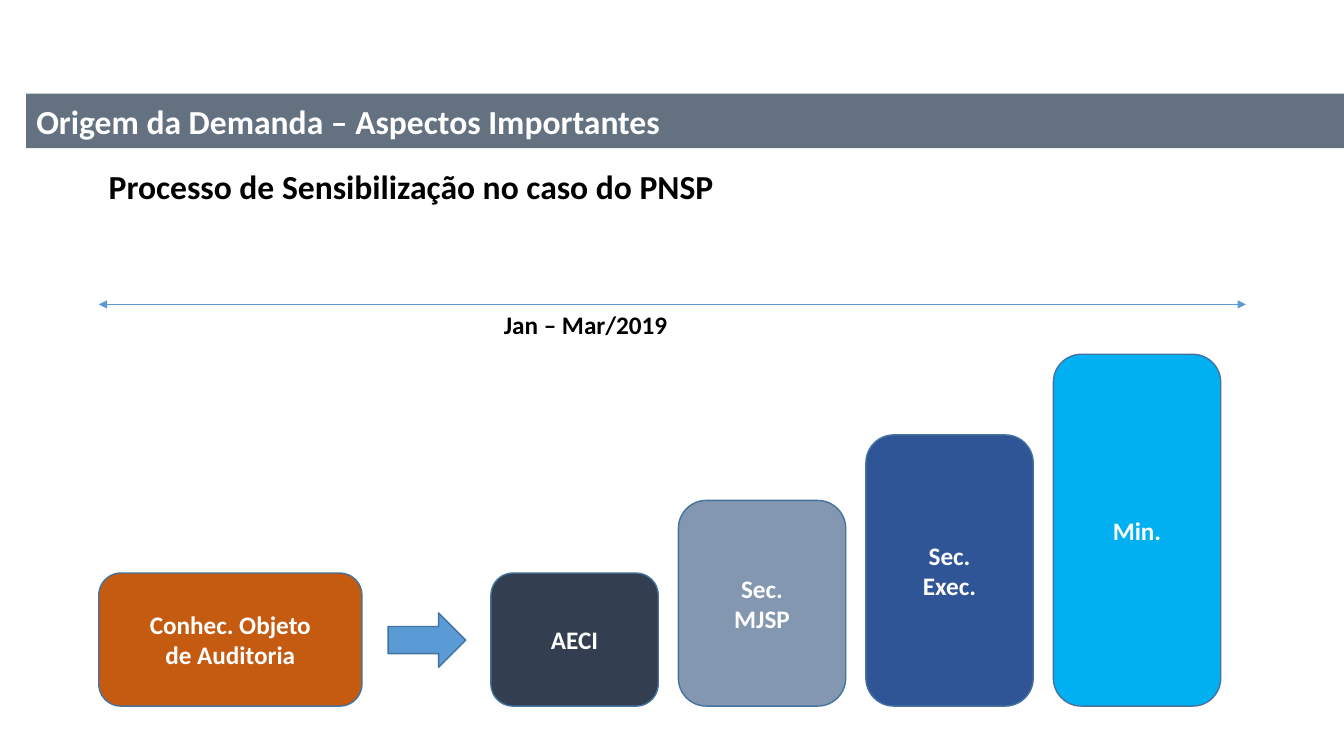
from lxml.etree import SubElement
from pptx import Presentation
from pptx.dml.color import RGBColor
from pptx.enum.shapes import MSO_CONNECTOR, MSO_SHAPE
from pptx.enum.text import MSO_ANCHOR, MSO_AUTO_SIZE, PP_ALIGN
from pptx.oxml.ns import qn
from pptx.util import Inches, Pt

WIDE, HIGH = Inches(13.333), Inches(7.5)

# Places are percent shares of the slide's width and height
LEFT, RIGHT = 7.35, 92.7
BASE = 93.4
STEP_LEFT, STEP_WIDE, STEP_PITCH = 36.53, 12.45, 13.95
LOW = 17.6
STEPS = [
    ("AECI", LOW, "333F50"),
    ("Sec.\nMJSP", 27.2, "8497B0"),
    ("Sec.\nExec.", 35.87, "2F5597"),
    ("Min.", 46.53, "00B0F0"),
]
EDGE, BLUE = "43739E", "5B9BD5"
FONT = {"name": "Calibri", "bold": True}


def color(code):
    return RGBColor.from_string(code)


def across(share):
    return round(WIDE * share / 100)


def down(share):
    return round(HIGH * share / 100)


def area(left, top, width, height):
    return across(left), down(top), across(width), down(height)


def paint(shape, code):
    shape.fill.solid()
    shape.fill.fore_color.rgb = color(code)


def write(shape, text, size, code, align=PP_ALIGN.LEFT, anchor=MSO_ANCHOR.MIDDLE):
    frame = shape.text_frame
    frame.text = text
    form = {"word_wrap": True, "auto_size": MSO_AUTO_SIZE.NONE,
            "vertical_anchor": anchor}
    for key, value in form.items():
        setattr(frame, key, value)
    for para in frame.paragraphs:
        para.alignment = align
        for key, value in {**FONT, "size": Pt(size)}.items():
            setattr(para.font, key, value)
        para.font.color.rgb = color(code)


def add_band(slide, text, place):
    band = slide.shapes.title
    for key, value in zip(("left", "top", "width", "height"), area(*place)):
        setattr(band, key, value)
    paint(band, "637181")
    write(band, text, 24, "FFFFFF")


def add_label(slide, text, size, place):
    label = slide.shapes.add_textbox(*area(*place))
    write(label, text, size, "000000", anchor=MSO_ANCHOR.TOP)


def add_form(slide, kind, place, fill):
    form = slide.shapes.add_shape(kind, *area(*place))
    form.shadow.inherit = False
    paint(form, fill)
    form.line.color.rgb = color(EDGE)
    form.line.width = Pt(1)
    return form


def add_block(slide, text, left, width, height, fill):
    place = (left, BASE - height, width, height)
    block = add_form(slide, MSO_SHAPE.ROUNDED_RECTANGLE, place, fill)
    write(block, text, 18, "FFFFFF", PP_ALIGN.CENTER)


def add_span(slide, left, right, top):
    span = slide.shapes.add_connector(
        MSO_CONNECTOR.STRAIGHT, across(left), down(top), across(right), down(top))
    span.line.color.rgb = color(BLUE)
    span.line.width = Pt(0.5)
    line = span.line._get_or_add_ln()
    for end in ("a:headEnd", "a:tailEnd"):
        SubElement(line, qn(end), type="triangle")
    SubElement(span._element.spPr, qn("a:effectLst"))


def main():
    deck = Presentation()
    deck.slide_width, deck.slide_height = WIDE, HIGH
    slide = deck.slides.add_slide(deck.slide_layouts[5])

    # Headings
    add_band(slide, "Origem da Demanda – Aspectos Importantes",
             (1.95, 12.4, 98.05, 7.2))
    add_label(slide, "Processo de Sensibilização no caso do PNSP", 24,
              (LEFT, 21.33, RIGHT - LEFT, 14))

    # Time span
    add_span(slide, LEFT, RIGHT, 40.27)
    add_label(slide, "Jan – Mar/2019", 18, (36.75, 40.27, 25.13, 5.33))

    # Starting point and arrow
    add_block(slide, "Conhec. Objeto\nde Auditoria", LEFT, 19.58, LOW, "C55A11")
    add_form(slide, MSO_SHAPE.RIGHT_ARROW, (28.88, 81.07, 5.78, 7.2), BLUE)

    # Rising steps
    for index, (text, height, fill) in enumerate(STEPS):
        left = STEP_LEFT + index * STEP_PITCH
        add_block(slide, text, left, STEP_WIDE, height, fill)

    deck.save("out.pptx")


if __name__ == "__main__":
    main()
